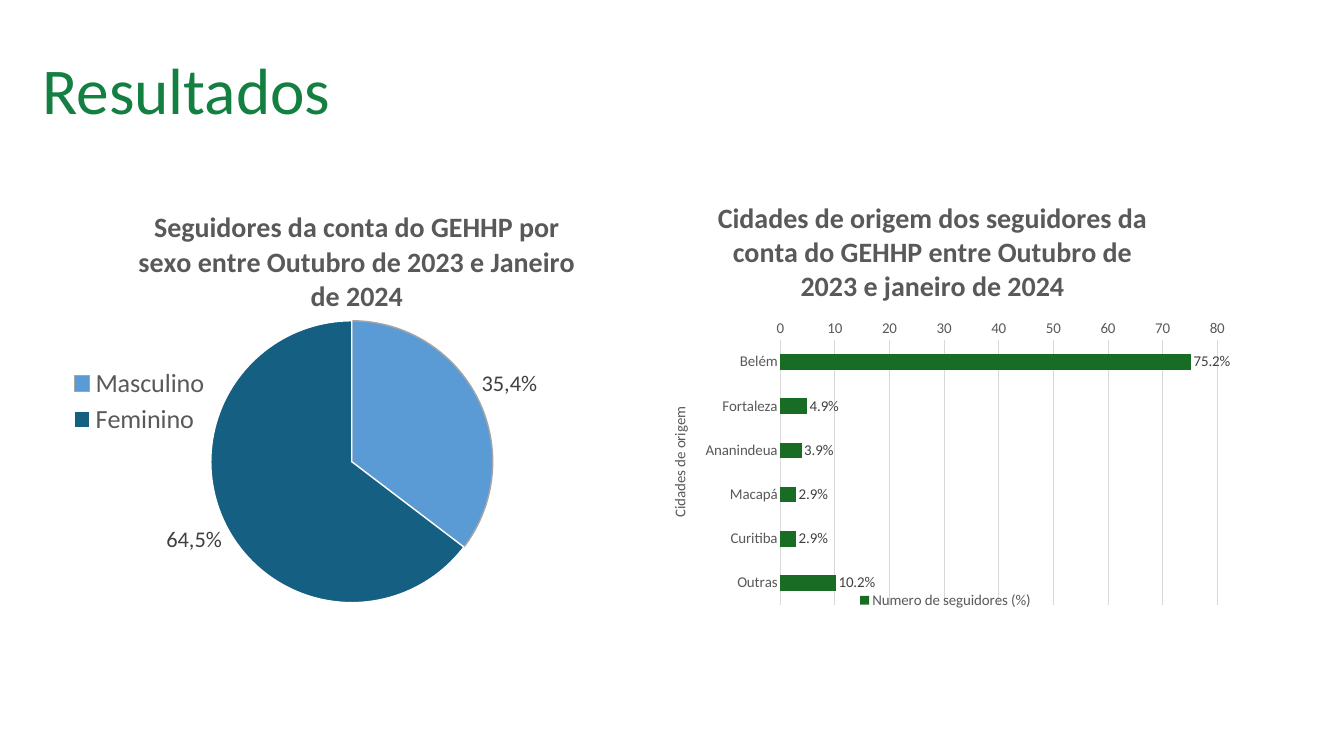
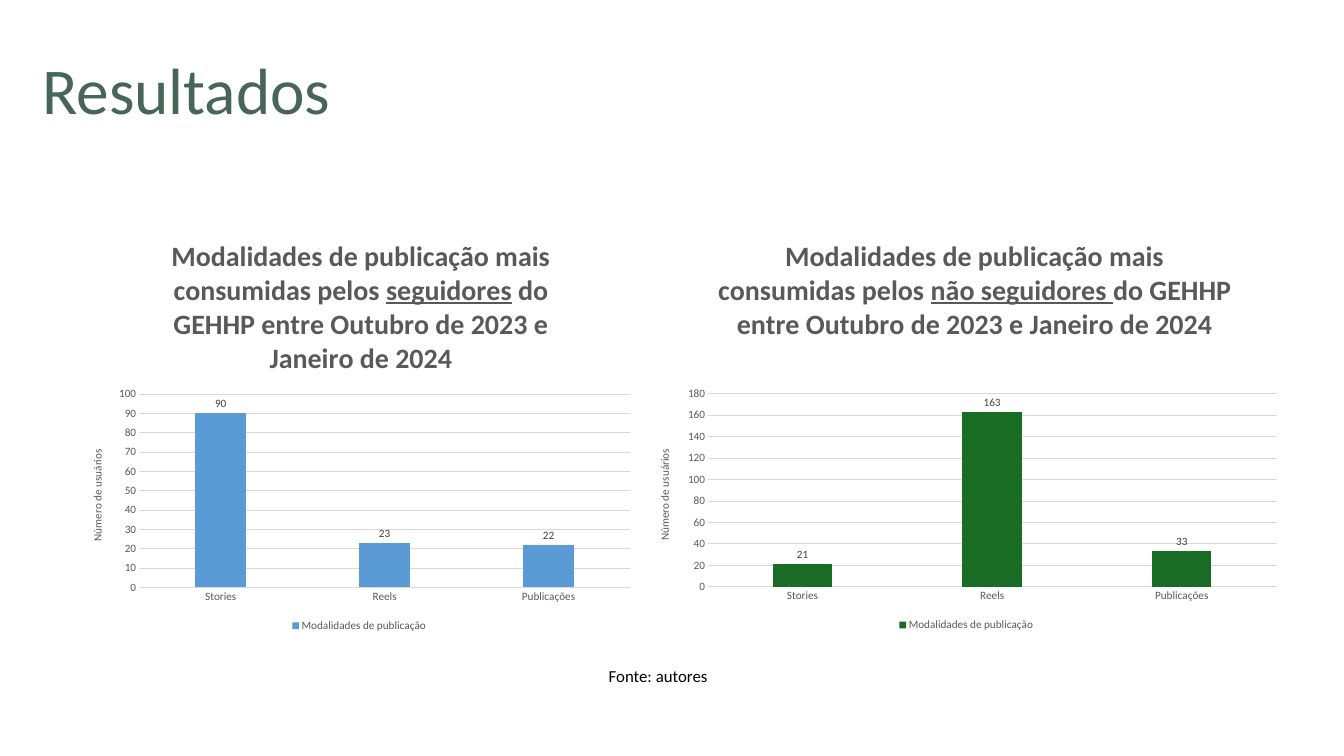
from lxml import etree
from pptx import Presentation
from pptx.chart.data import CategoryChartData
from pptx.dml.color import RGBColor
from pptx.enum.chart import (XL_CHART_TYPE as ChartType, XL_LABEL_POSITION as LabelPosition,
                             XL_LEGEND_POSITION as LegendPosition, XL_TICK_MARK as TickMark)
from pptx.enum.text import MSO_ANCHOR as Anchor
from pptx.oxml.ns import qn
from pptx.util import Inches, Pt

FONT = "Calibri"
COLORS = {
    "white": "FFFFFF", "black": "000000", "title": "137F41", "muted title": "476559",
    "text": "595959", "label": "404040", "grid": "D9D9D9", "outline": "A5A5A5",
    "green": "186C24", "blue": "5B9BD5", "petrol": "145F82",
}


def color(name):
    return RGBColor.from_string(COLORS[name])


def style_font(font, size, name, bold=False):
    font.name, font.size, font.bold = FONT, Pt(size), bold
    font.color.rgb = color(name)


def place_part(chart, tag, index, fractions):
    """Fix a chart part at left, top[, width, height], as fractions of the chart."""
    part = chart.element.find(qn("c:chart")).find(qn(tag))
    for old in part.findall(qn("c:layout")):
        part.remove(old)
    layout = etree.Element(qn("c:layout"))
    manual = etree.SubElement(layout, qn("c:manualLayout"))
    settings = [("xMode", "edge"), ("yMode", "edge"), *zip("xywh", fractions)]
    if tag == "c:plotArea":
        settings.insert(0, ("layoutTarget", "inner"))
    for key, value in settings:
        etree.SubElement(manual, qn(f"c:{key}")).set("val", str(value))
    part.insert(index, layout)


def add_page(deck, title_color):
    page = deck.slides.add_slide(deck.slide_layouts[5])
    title = page.shapes.title
    title.left, title.top, title.width, title.height = map(Inches, (0.63, 0.57, 12.76, 1.33))
    frame = title.text_frame
    frame.text = "Resultados"
    frame.margin_left = frame.margin_right = frame.margin_top = frame.margin_bottom = 0
    frame.vertical_anchor = Anchor.BOTTOM
    para = frame.paragraphs[0]
    para.alignment = 1
    para.line_spacing = Pt(92)
    style_font(para.runs[0].font, 70, title_color)
    return page


def add_chart(page, kind, box, series_name, values, title_parts, title_at, plot_at):
    """Add a one-series chart; every second title part is underlined."""
    data = CategoryChartData()
    data.categories = list(values)
    data.add_series(series_name, list(values.values()))
    chart = page.shapes.add_chart(kind, *map(Inches, box), data).chart
    style_font(chart.font, 10, "black")
    chart.has_title = True
    para = chart.chart_title.text_frame.paragraphs[0]
    for number, part in enumerate(title_parts):
        span = para.add_run()
        span.text = part
        style_font(span.font, 30, "text", bold=True)
        span.font.underline = number % 2 == 1
    place_part(chart, "c:title", 1, title_at)
    place_part(chart, "c:plotArea", 0, plot_at)
    return chart


def add_legend(chart, position, size, overlay=False, at=None):
    chart.has_legend = True
    chart.legend.position = position
    chart.legend.include_in_layout = overlay
    style_font(chart.legend.font, size, "text")
    if at:
        place_part(chart, "c:legend", 1, at)


def style_bars(chart, fill, size, gap, number_format, titled_axis, axis_title):
    """Format the axes, bars and value labels of a bar or column chart."""
    plot = chart.plots[0]
    plot.gap_width, plot.vary_by_categories = gap, False
    bars = plot.series[0]
    bars.format.fill.solid()
    bars.format.fill.fore_color.rgb = color(fill)
    bars.invert_if_negative = False
    labels = bars.data_labels
    labels.show_value = True
    labels.position = LabelPosition.OUTSIDE_END
    labels.number_format, labels.number_format_is_linked = number_format, False
    style_font(labels.font, size, "label")

    for axis in (chart.category_axis, chart.value_axis):
        axis.major_tick_mark = axis.minor_tick_mark = TickMark.NONE
        style_font(axis.tick_labels.font, size, "text")
    chart.category_axis.format.line.color.rgb = color("grid")
    chart.category_axis.format.line.width = Pt(0.75)
    chart.value_axis.format.line.fill.background()
    grid = chart.value_axis.major_gridlines.format.line
    grid.color.rgb, grid.width = color("grid"), Pt(0.75)
    chart.value_axis.minimum_scale = 0

    frame = titled_axis.axis_title.text_frame
    frame.text = axis_title
    style_font(frame.paragraphs[0].runs[0].font, size, "text")


def add_gender_pie(page, box):
    chart = add_chart(page, ChartType.PIE, box, "Seguidores", {"Masculino": 35, "Feminino": 64},
                      ["Seguidores da conta do GEHHP por sexo entre Outubro de 2023 e Janeiro de 2024"],
                      (0.125, 0.03), (0.258, 0.309, 0.484, 0.667))
    add_legend(chart, LegendPosition.LEFT, 28, True, (0.01, 0.41, 0.25, 0.18))
    slices = chart.plots[0].series[0]
    styles = [("blue", "outline", "35,4%"), ("petrol", "white", "64,5%")]
    for number, (fill, line, text) in enumerate(styles):
        point = slices.points[number]
        point.format.fill.solid()
        point.format.fill.fore_color.rgb = color(fill)
        point.format.line.color.rgb = color(line)
        point.format.line.width = Pt(1.5)
        label = point.data_label
        label.text_frame.text = text
        style_font(label.text_frame.paragraphs[0].runs[0].font, 24, "label")
        label.position = LabelPosition.OUTSIDE_END


def add_city_bars(page, box):
    cities = {"Belém": 75.2, "Fortaleza": 4.9, "Ananindeua": 3.9,
              "Macapá": 2.9, "Curitiba": 2.9, "Outras": 10.2}
    chart = add_chart(page, ChartType.BAR_CLUSTERED, box, "Numero de seguidores (%)", cities,
                      ["Cidades de origem dos seguidores da conta do GEHHP "
                       "entre Outubro de 2023 e janeiro de 2024"],
                      (0.1, 0.01), (0.216, 0.356, 0.751, 0.624))
    add_legend(chart, LegendPosition.BOTTOM, 16, True, (0.34, 0.945, 0.32, 0.055))
    style_bars(chart, "green", 16, 182, '0.0"%"', chart.category_axis, "Cidades de origem")
    chart.category_axis.reverse_order = True
    chart.value_axis.maximum_scale, chart.value_axis.major_unit = 80, 10
    chart.value_axis.tick_labels.number_format = "0"
    chart.value_axis.tick_labels.number_format_is_linked = False


def add_format_columns(page, box, audience, counts, fill, scale, title_at, plot_at):
    values = dict(zip(("Stories", "Reels", "Publicações"), counts))
    title = ["Modalidades de publicação mais consumidas pelos ", audience,
             "do GEHHP entre Outubro de 2023 e Janeiro de 2024"]
    if not audience.endswith(" "):
        title[2] = " " + title[2]
    chart = add_chart(page, ChartType.COLUMN_CLUSTERED, box, "Modalidades de publicação",
                      values, title, title_at, plot_at)
    add_legend(chart, LegendPosition.BOTTOM, 12)
    style_bars(chart, fill, 12, 219, "0", chart.value_axis, "Número de usuários")
    chart.plots[0].overlap = -27
    chart.value_axis.maximum_scale, chart.value_axis.major_unit = scale


def add_source_note(page, box):
    frame = page.shapes.add_textbox(*map(Inches, box)).text_frame
    frame.word_wrap = True
    frame.text = "Fonte: autores"
    style_font(frame.paragraphs[0].runs[0].font, 18, "black")


def main():
    deck = Presentation()
    deck.slide_width, deck.slide_height = Inches(20), Inches(11.25)

    # Followers by gender and city
    page = add_page(deck, "title")
    add_gender_pie(page, (0.9, 2.83, 8.67, 6.29))
    add_city_bars(page, (9.74, 2.81, 8.66, 6.32))

    # Publication formats by audience
    page = add_page(deck, "muted title")
    add_format_columns(page, (1.13, 3.33, 8.43, 6.12), "seguidores", (90, 23, 22), "blue",
                       (100, 10), (0.165, 0.03), (0.111, 0.414, 0.868, 0.47))
    add_format_columns(page, (9.57, 3.33, 9.62, 6.11), "não seguidores ", (21, 163, 33), "green",
                       (180, 20), (0.113, 0.03), (0.1, 0.414, 0.88, 0.47))
    add_source_note(page, (8.96, 9.86, 10, 0.4))

    deck.save("out.pptx")


if __name__ == "__main__":
    main()
